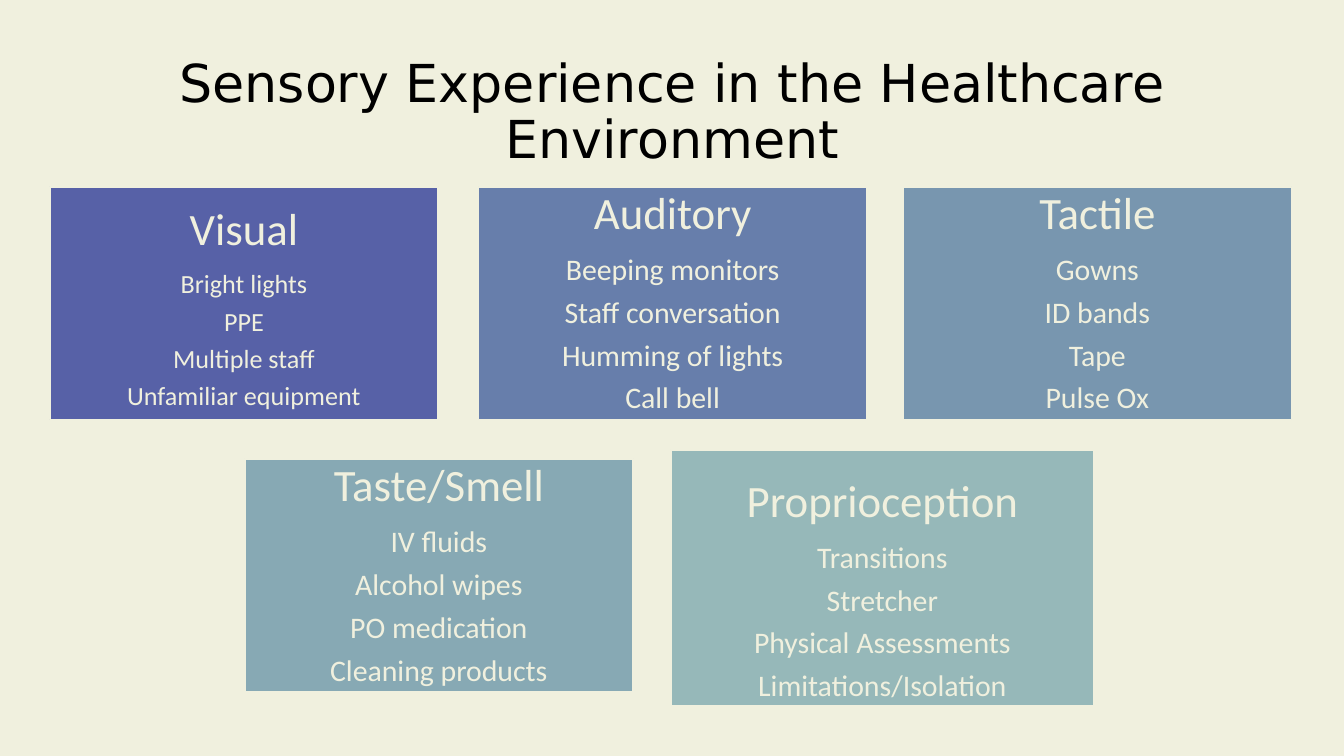
from dataclasses import dataclass

from pptx import Presentation
from pptx.dml.color import RGBColor
from pptx.enum.shapes import MSO_SHAPE
from pptx.enum.text import MSO_ANCHOR, MSO_AUTO_SIZE, PP_ALIGN
from pptx.util import Inches, Pt

WIDTH = Inches(10)
HEIGHT = WIDTH * 9 // 16


@dataclass(frozen=True)
class Theme:
    paper: str = "F0F0DE"
    ink: str = "000000"
    title_font: str = "DejaVu Sans"
    body_font: str = "Calibri"
    title_size: int = 28
    heading_size: int = 24
    item_size: int = 16
    small_size: int = 14
    line_spacing: float = 0.9
    space_after: float = 0.35  # share of the type size


THEME = Theme()
TITLE = "Sensory Experience in the Healthcare Environment"
TITLE_BOX = (6.9, 5.3, 86.2, 19.4)

# Boxes are left, top, width, height in percent of the slide.
CARD_W, CARD_H = 28.9, 30.8
TOP_ROW, BOTTOM_ROW = 24.7, 60.7

# heading, items, fill, box, item size, top inset in inches
CARDS = [
    ("Visual",
     ["Bright lights", "PPE", "Multiple staff", "Unfamiliar equipment"],
     "5761A7", (3.7, TOP_ROW, CARD_W, CARD_H), THEME.small_size, 0.09),
    ("Auditory",
     ["Beeping monitors", "Staff conversation", "Humming of lights", "Call bell"],
     "677EAB", (35.6, TOP_ROW, CARD_W, CARD_H), THEME.item_size, 0),
    ("Tactile",
     ["Gowns", "ID bands", "Tape", "Pulse Ox"],
     "7896AF", (67.2, TOP_ROW, CARD_W, CARD_H), THEME.item_size, 0),
    ("Taste/Smell",
     ["IV fluids", "Alcohol wipes", "PO medication", "Cleaning products"],
     "87A9B4", (18.2, BOTTOM_ROW, CARD_W, CARD_H), THEME.item_size, 0),
    ("Proprioception",
     ["Transitions", "Stretcher", "Physical Assessments", "Limitations/Isolation"],
     "96B8B9", (49.9, 59.5, 31.5, 33.9), THEME.item_size, 0.19),
]


def to_emu(box):
    left, top, width, height = box
    return [int(v * side / 100) for v, side in
            ((left, WIDTH), (top, HEIGHT), (width, WIDTH), (height, HEIGHT))]


def write(p, text, font, size, color):
    p.alignment = PP_ALIGN.CENTER
    p.line_spacing = THEME.line_spacing
    r = p.add_run()
    r.text = text
    r.font.name = font
    r.font.size = Pt(size)
    r.font.color.rgb = RGBColor.from_string(color)


def add_title(slide, text, box):
    s = slide.shapes.title
    s.left, s.top, s.width, s.height = to_emu(box)
    tf = s.text_frame
    tf.auto_size = MSO_AUTO_SIZE.NONE
    tf.vertical_anchor = MSO_ANCHOR.MIDDLE
    write(tf.paragraphs[0], text, THEME.title_font, THEME.title_size, THEME.ink)


def add_card(slide, heading, items, fill, box, item_size, top_inset):
    s = slide.shapes.add_shape(MSO_SHAPE.RECTANGLE, *to_emu(box))
    s.shadow.inherit = False
    s.fill.solid()
    s.fill.fore_color.rgb = RGBColor.from_string(fill)
    s.line.color.rgb = RGBColor.from_string(THEME.paper)
    s.line.width = Pt(1)

    tf = s.text_frame
    tf.word_wrap = True
    tf.vertical_anchor = MSO_ANCHOR.MIDDLE
    tf.margin_top, tf.margin_bottom = Inches(top_inset), 0
    lines = [(heading, THEME.heading_size)] + [(item, item_size) for item in items]
    for i, (text, size) in enumerate(lines):
        p = tf.add_paragraph() if i else tf.paragraphs[0]
        write(p, text, THEME.body_font, size, THEME.paper)
        if i < len(lines) - 1:
            p.space_after = Pt(round(size * THEME.space_after, 1))


def main():
    prs = Presentation()
    prs.slide_width, prs.slide_height = WIDTH, HEIGHT
    slide = prs.slides.add_slide(prs.slide_layouts[5])
    background = slide.background.fill
    background.solid()
    background.fore_color.rgb = RGBColor.from_string(THEME.paper)
    add_title(slide, TITLE, TITLE_BOX)
    for card in CARDS:
        add_card(slide, *card)
    prs.save("out.pptx")


if __name__ == "__main__":
    main()
